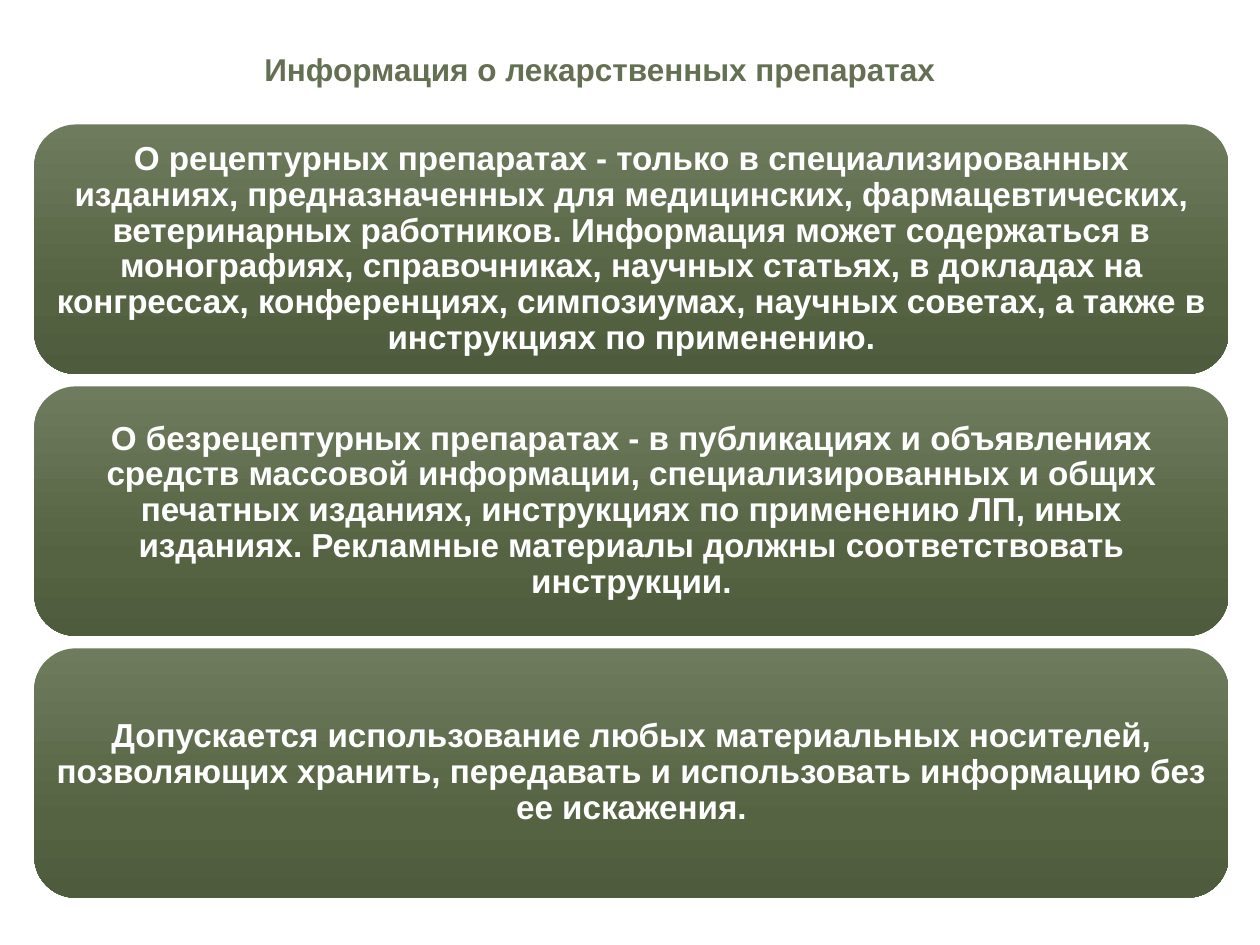
from copy import deepcopy

from pptx import Presentation
from pptx.dml.color import RGBColor
from pptx.enum.shapes import MSO_SHAPE
from pptx.enum.text import MSO_ANCHOR, MSO_AUTO_SIZE, PP_ALIGN
from pptx.oxml.ns import qn
from pptx.util import Cm, Pt

# Content
TITLE = "Информация о лекарственных препаратах"
PANELS = [
    "О рецептурных препаратах - только в специализированных изданиях, "
    "предназначенных для медицинских, фармацевтических, ветеринарных работников. "
    "Информация может содержаться в монографиях, справочниках, научных статьях, "
    "в докладах на конгрессах, конференциях, симпозиумах, научных советах, "
    "а также в инструкциях по применению.",
    "О безрецептурных препаратах - в публикациях и объявлениях средств массовой "
    "информации, специализированных и общих печатных изданиях, инструкциях "
    "по применению ЛП, иных изданиях. Рекламные материалы должны "
    "соответствовать инструкции.",
    "Допускается использование любых материальных носителей, позволяющих хранить, "
    "передавать и использовать информацию без ее искажения.",
]

# Style
COLORS = {"title": "637052", "text": "FFFFFF",
          "light": "6E7B5D", "middle": "556342", "dark": "4E5B3D"}
GRADIENT = [(0, "light"), (0.69, "middle"), (1, "dark")]
FONT = "Arial"

# Layout in centimetres
PANEL_LEFT, PANEL_TOP = 0.69, 2.51
PANEL_WIDTH, PANEL_HEIGHT, PANEL_GAP = 24.08, 5.03, 0.25


def color(name):
    return RGBColor.from_string(COLORS[name])


def add_run(paragraph, text, size, color_name):
    run = paragraph.add_run()
    run.text = text
    run.font.name = FONT
    run.font.size = Pt(size)
    run.font.bold = True
    run.font.color.rgb = color(color_name)


def fill_gradient(shape):
    shape.fill.gradient()
    shape.fill.gradient_angle = 270
    stop_list = shape._element.spPr.find(qn("a:gradFill")).find(qn("a:gsLst"))
    stop_list.append(deepcopy(stop_list[0]))
    for stop, (position, name) in zip(shape.fill.gradient_stops, GRADIENT):
        stop.position = position
        stop.color.rgb = color(name)


def add_panel(slide, top, text):
    shape = slide.shapes.add_shape(
        MSO_SHAPE.ROUNDED_RECTANGLE, Cm(PANEL_LEFT), Cm(top),
        Cm(PANEL_WIDTH), Cm(PANEL_HEIGHT))
    shape.shadow.inherit = False
    shape.line.fill.background()
    fill_gradient(shape)

    frame = shape.text_frame
    frame.word_wrap = True
    frame.vertical_anchor = MSO_ANCHOR.MIDDLE
    frame.margin_left = frame.margin_right = Cm(0.2)
    frame.margin_top = frame.margin_bottom = Cm(0.1)
    paragraph = frame.paragraphs[0]
    paragraph.alignment = PP_ALIGN.CENTER
    paragraph.line_spacing = 0.9
    add_run(paragraph, text, 19, "text")


def main():
    presentation = Presentation()
    presentation.slide_width, presentation.slide_height = Cm(25.4), Cm(19.05)
    slide = presentation.slides.add_slide(presentation.slide_layouts[6])

    # Stacked panels
    for index, text in enumerate(PANELS):
        add_panel(slide, PANEL_TOP + index * (PANEL_HEIGHT + PANEL_GAP), text)

    # Title
    title = slide.shapes.add_textbox(Cm(5.08), Cm(0.89), Cm(14.17), Cm(1.02))
    title.text_frame.word_wrap = False
    title.text_frame.auto_size = MSO_AUTO_SIZE.SHAPE_TO_FIT_TEXT
    add_run(title.text_frame.paragraphs[0], TITLE, 18, "title")

    presentation.save("out.pptx")


if __name__ == "__main__":
    main()
